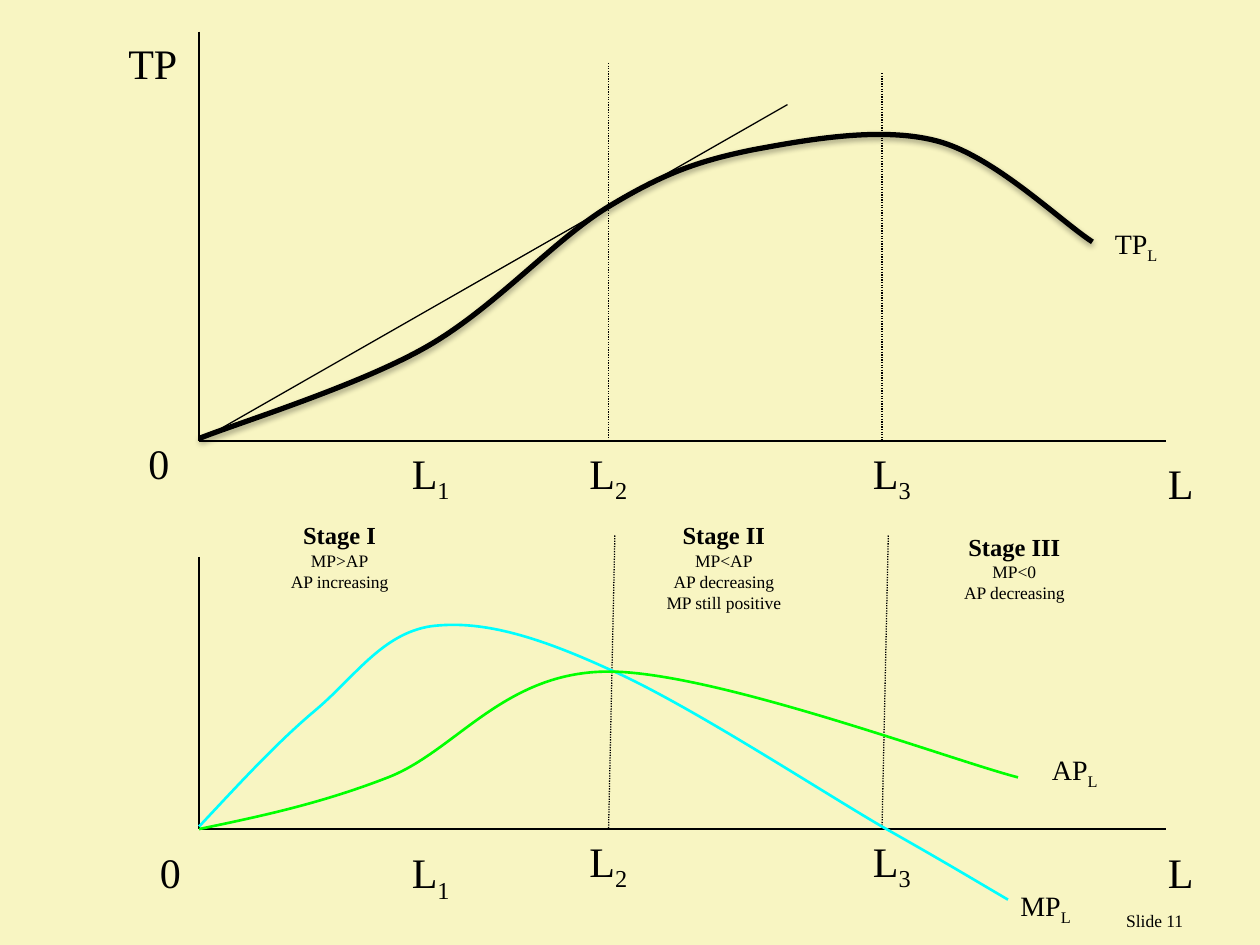
from lxml import etree
from pptx import Presentation
from pptx.dml.color import RGBColor
from pptx.enum.dml import MSO_LINE
from pptx.enum.shapes import MSO_CONNECTOR
from pptx.enum.text import PP_ALIGN
from pptx.oxml import parse_xml
from pptx.oxml.ns import nsdecls, qn
from pptx.util import Inches, Pt

FONT = "Times New Roman"
BLACK = RGBColor(0, 0, 0)
CYAN = RGBColor(0, 0xFF, 0xFF)
GREEN = RGBColor(0, 0xFF, 0)
CREAM = RGBColor(0xF8, 0xF5, 0xC2)

X0, X_END = 1.58, 9.25      # both charts share the labour axis
L2, L3 = 4.83, 7            # stage boundaries

# Charts: top of the vertical axis and height of the horizontal axis
AXES = [(0.25, 3.5), (4.42, 6.58)]

# Stage boundaries: start, end
BOUNDARIES = [
    ((L2, 0.5), (L2, 3.5)), ((L3, 0.58), (L3, 3.5)),
    ((L2 + 0.05, 4.25), (L2, 6.58)), ((L3 + 0.05, 4.25), (L3, 6.58)),
]
RAY = ((X0, 3.5), (6.25, 0.83))

# Curves: colour, width, start point, then three Bezier points per segment
MP_CURVE = (CYAN, 1.5, [
    (X0, 6.56), (1.89, 6.23), (2.19, 5.9), (2.5, 5.64),
    (2.81, 5.38), (3.03, 5.03), (3.42, 4.97),
    (3.81, 4.92), (4.24, 5.04), (4.83, 5.31),
    (5.43, 5.57), (6.47, 6.25), (7, 6.56),
    (7.53, 6.86), (7.76, 7), (8, 7.14)])
AP_CURVE = (GREEN, 1.5, [
    (X0, 6.58), (2.06, 6.48), (2.54, 6.38), (3.08, 6.17),
    (3.62, 5.96), (4, 5.33), (4.83, 5.33),
    (5.67, 5.33), (7.54, 6.03), (8.08, 6.17)])
TP_CURVE = (BLACK, 3, [
    (X0, 3.48), (1.88, 3.36), (2.85, 3.06), (3.39, 2.75),
    (3.93, 2.44), (4.4, 1.9), (4.83, 1.64),
    (5.26, 1.38), (5.53, 1.28), (5.97, 1.19),
    (6.4, 1.11), (6.99, 1), (7.44, 1.12),
    (7.89, 1.24), (8.41, 1.75), (8.67, 1.92)])

# Labels: text, subscript, size, left, top, width, height
LABELS = [
    ("TP", "", 24, 0.92, 0.25, 0.67, 0.5),
    ("0", "", 24, 1.08, 3.42, 0.5, 0.5),
    ("L", "1", 24, 3.17, 3.5, 0.5, 0.77),
    ("L", "2", 24, 4.58, 3.5, 0.5, 0.77),
    ("L", "3", 24, 6.83, 3.5, 0.5, 0.77),
    ("L", "", 24, 9.17, 3.58, 0.5, 0.5),
    ("0", "", 24, 1.17, 6.67, 0.5, 0.5),
    ("L", "1", 24, 3.17, 6.67, 0.5, 0.77),
    ("L", "2", 24, 4.58, 6.58, 0.5, 0.77),
    ("L", "3", 24, 6.83, 6.58, 0.5, 0.77),
    ("L", "", 24, 9.17, 6.67, 0.5, 0.5),
    ("TP", "L", 16, 8.75, 1.75, 0.55, 0.37),
    ("AP", "L", 16, 8.25, 5.92, 0.58, 0.37),
    ("MP", "L", 16, 8, 7, 0.62, 0.37),
    ("Slide 11", "", 10, 8.84, 7.17, 1.16, 0.27),
]

# Stage notes: heading and lines, then left, top, width, height
STAGES = [
    (["Stage I", "MP>AP", "AP increasing"], 2.2, 4.08, 0.99, 0.67),
    (["Stage II", "MP<AP", "AP decreasing", "MP still positive"],
     5.18, 4.08, 1.13, 0.84),
    (["Stage III", "MP<0", "AP decreasing"], 7.54, 4.17, 1.02, 0.67),
]

prs = Presentation()
prs.slide_width, prs.slide_height = Inches(10), Inches(7.5)
s = prs.slides.add_slide(prs.slide_layouts[6])
s.background.fill.solid()
s.background.fill.fore_color.rgb = CREAM


def add_line(start, end, width=0.75, dash=None):
    ends = [Inches(v) for v in (*start, *end)]
    c = s.shapes.add_connector(MSO_CONNECTOR.STRAIGHT, *ends)
    c.line.color.rgb = BLACK
    c.line.width = Pt(width)
    if dash:
        c.line.dash_style = dash
    etree.SubElement(c._element.spPr, qn("a:effectLst"))


def add_curve(color, width, points):
    start, *rest = [(Inches(x), Inches(y)) for x, y in points]
    fb = s.shapes.build_freeform(*start)
    fb.add_line_segments(rest, close=False)
    sp = fb.convert_to_shape()
    sp.fill.background()
    sp.line.color.rgb = color
    sp.line.width = Pt(width)
    sp.shadow.inherit = False
    # Turn every three straight segments into one Bezier segment
    lines = list(sp._element.iter(qn("a:lnTo")))
    for i in range(0, len(lines), 3):
        bezier = etree.Element(qn("a:cubicBezTo"))
        lines[i].addprevious(bezier)
        for ln in lines[i:i + 3]:
            bezier.append(ln[0])
            ln.getparent().remove(ln)
    return sp


def add_text(left, top, width, height, wrap):
    box = s.shapes.add_textbox(*map(Inches, (left, top, width, height)))
    box.text_frame.word_wrap = wrap
    return box.text_frame


def add_run(p, text, size, bold=False):
    r = p.add_run()
    r.text = text
    r.font.name, r.font.size, r.font.bold = FONT, Pt(size), bold
    r.font.color.rgb = BLACK
    return r


# Axes, stage boundaries and ray from the origin
for top, base in AXES:
    add_line((X0, top), (X0, base), 1.5)
    add_line((X0, base), (X_END, base), 1.5)
for start, end in BOUNDARIES:
    add_line(start, end, dash=MSO_LINE.ROUND_DOT)
add_line(*RAY)

# Product curves; only total product casts a soft shadow
add_curve(*MP_CURVE)
add_curve(*AP_CURVE)
tp = add_curve(*TP_CURVE)
tp._element.spPr.find(qn("a:effectLst")).append(parse_xml(
    f'<a:outerShdw {nsdecls("a")} blurRad="{Pt(3.1)}" dist="{Pt(1.8)}" '
    'dir="5400000" rotWithShape="0"><a:srgbClr val="000000">'
    '<a:alpha val="35000"/></a:srgbClr></a:outerShdw>'))

# Axis and curve labels
for text, sub, size, *place in LABELS:
    p = add_text(*place, wrap=size != 16).paragraphs[0]
    add_run(p, text, size)
    if sub:
        r = add_run(p, sub, size)
        r.font._element.set("baseline", "-25000")

# Stage notes
for lines, *place in STAGES:
    tf = add_text(*place, wrap=False)
    for i, line in enumerate(lines):
        p = tf.add_paragraph() if i else tf.paragraphs[0]
        p.alignment = PP_ALIGN.CENTER
        add_run(p, line, 10 if i else 14, bold=i == 0)

prs.save("out.pptx")
